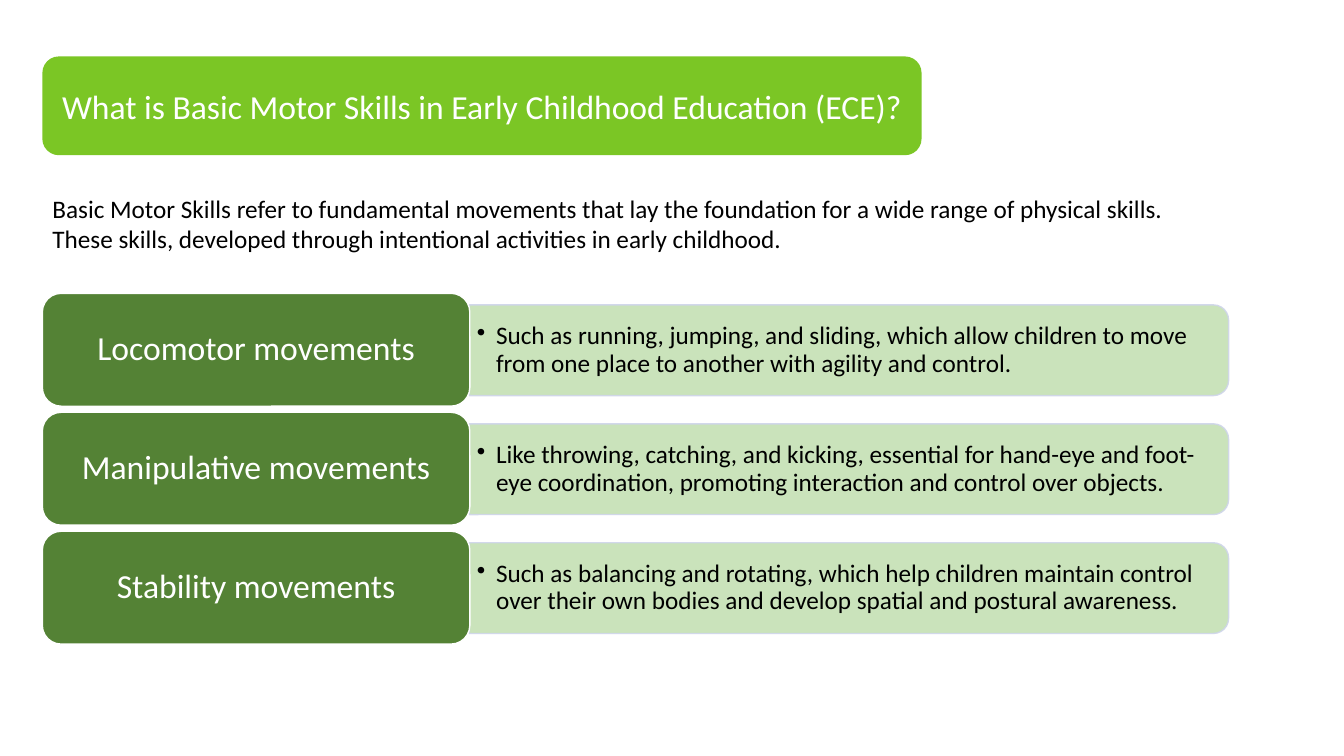
import pptx
import pptx.dml.color
import pptx.enum.shapes
import pptx.enum.text
import pptx.oxml.ns
import pptx.util
from lxml import etree

PX = 9144  # EMU per px, 100 px to the inch
FONT = "Calibri"
COLORS = {
    "banner": "7BC625",
    "label": "548235",
    "panel": "C5E0B4",
    "panel_line": "CFD5EA",
    "light": "FFFFFF",
    "dark": "000000",
}
SHAPE = pptx.enum.shapes.MSO_SHAPE
ALIGN = pptx.enum.text.PP_ALIGN
ANCHOR = pptx.enum.text.MSO_ANCHOR

TITLE = "What is Basic Motor Skills in Early Childhood Education (ECE)?"
INTRO = ("Basic Motor Skills refer to fundamental movements that lay the foundation "
         "for a wide range of physical skills. These skills, developed through "
         "intentional activities in early childhood.")
MOVEMENTS = [
    ("Locomotor movements",
     "Such as running, jumping, and sliding, which allow children to move from one "
     "place to another with agility and control."),
    ("Manipulative movements",
     "Like throwing, catching, and kicking, essential for hand-eye and foot-eye "
     "coordination, promoting interaction and control over objects."),
    ("Stability movements",
     "Such as balancing and rotating, which help children maintain control over "
     "their own bodies and develop spatial and postural awareness."),
]

# Layout in px
LEFT = 42
ROW_TOP, ROW_STEP = 291, 118
LABEL_W, LABEL_H = 424, 112
PANEL_W, PANEL_H = 753, 90
TEXT_W, TEXT_H = 749, 81
BULLET_INDENT = 19


def px(*values):
    return [pptx.util.Emu(v * PX) for v in values]


def rgb(name):
    return pptx.dml.color.RGBColor.from_string(COLORS[name])


def place(sp, x, y, w, h):
    sp.left, sp.top, sp.width, sp.height = px(x, y, w, h)


def add_block(s, kind, box, fill, line=None):
    sp = s.shapes.add_shape(kind, *px(*box))
    sp.shadow.inherit = False
    sp.fill.solid()
    sp.fill.fore_color.rgb = rgb(fill)
    if line:
        sp.line.color.rgb = rgb(line)
        sp.line.width = pptx.util.Pt(1)
    else:
        sp.line.fill.background()
    return sp


def set_alpha(sp, percent):
    for color in sp.element.spPr.iter(pptx.oxml.ns.qn("a:srgbClr")):
        alpha = etree.SubElement(color, pptx.oxml.ns.qn("a:alpha"))
        alpha.set("val", str(percent * 1000))


def write(sp, text, size, color, align=ALIGN.LEFT, anchor=ANCHOR.MIDDLE,
          spacing=1.0, bullet=None):
    tf = sp.text_frame
    tf.word_wrap = True
    tf.auto_size = pptx.enum.text.MSO_AUTO_SIZE.NONE
    tf.vertical_anchor = anchor
    p = tf.paragraphs[0]
    p.alignment = align
    p.line_spacing = spacing
    p.space_before = pptx.util.Pt(0)

    # Bullet and hanging indent
    pPr = p._p.get_or_add_pPr()
    indent = BULLET_INDENT * PX if bullet else 0
    pPr.set("marL", str(indent))
    pPr.set("indent", str(-indent))
    tag = "a:buChar" if bullet else "a:buNone"
    mark = etree.SubElement(pPr, pptx.oxml.ns.qn(tag))
    if bullet:
        mark.set("char", bullet)

    r = p.add_run()
    r.text = text
    r.font.name = FONT
    r.font.size = pptx.util.Pt(size)
    r.font.color.rgb = rgb(color)


def add_title(s):
    box = (LEFT, 56, 872, 98)
    add_block(s, SHAPE.ROUNDED_RECTANGLE, box, "banner")
    title = s.shapes.title
    place(title, *box)
    write(title, TITLE, 24, "light", ALIGN.CENTER)
    title.element.getparent().append(title.element)  # bring in front of the banner


def add_intro(s):
    body = s.placeholders[1]
    place(body, LEFT, 187, 1177, 71)
    write(body, INTRO, 18, "dark", anchor=ANCHOR.TOP)


def add_movement(s, top, name, description):
    panel_x = LEFT + LABEL_W
    middle = top + LABEL_H // 2

    # Panel: upright shape turned a quarter so its round corners face right
    panel = add_block(s, SHAPE.ROUND_2_SAME_RECTANGLE,
                      (panel_x + (PANEL_W - PANEL_H) // 2, middle - PANEL_W // 2,
                       PANEL_H, PANEL_W), "panel", "panel_line")
    panel.rotation = 90
    set_alpha(panel, 90)

    # Description
    note = s.shapes.add_textbox(*px(panel_x, middle - TEXT_H // 2, TEXT_W, TEXT_H))
    tf = note.text_frame
    tf.margin_left, tf.margin_right, tf.margin_top, tf.margin_bottom = px(7, 7, 4, 4)
    write(note, description, 18, "dark", spacing=0.9, bullet="•")

    # Label
    label = add_block(s, SHAPE.ROUNDED_RECTANGLE,
                      (LEFT, top, LABEL_W, LABEL_H), "label", "light")
    write(label, name, 24, "light", ALIGN.CENTER, spacing=0.9)


def main():
    prs = pptx.Presentation()
    prs.slide_width, prs.slide_height = px(1333, 750)
    s = prs.slides.add_slide(prs.slide_layouts[1])
    add_title(s)
    add_intro(s)
    for i, (name, description) in enumerate(MOVEMENTS):
        add_movement(s, ROW_TOP + i * ROW_STEP, name, description)
    prs.save("out.pptx")


if __name__ == "__main__":
    main()
